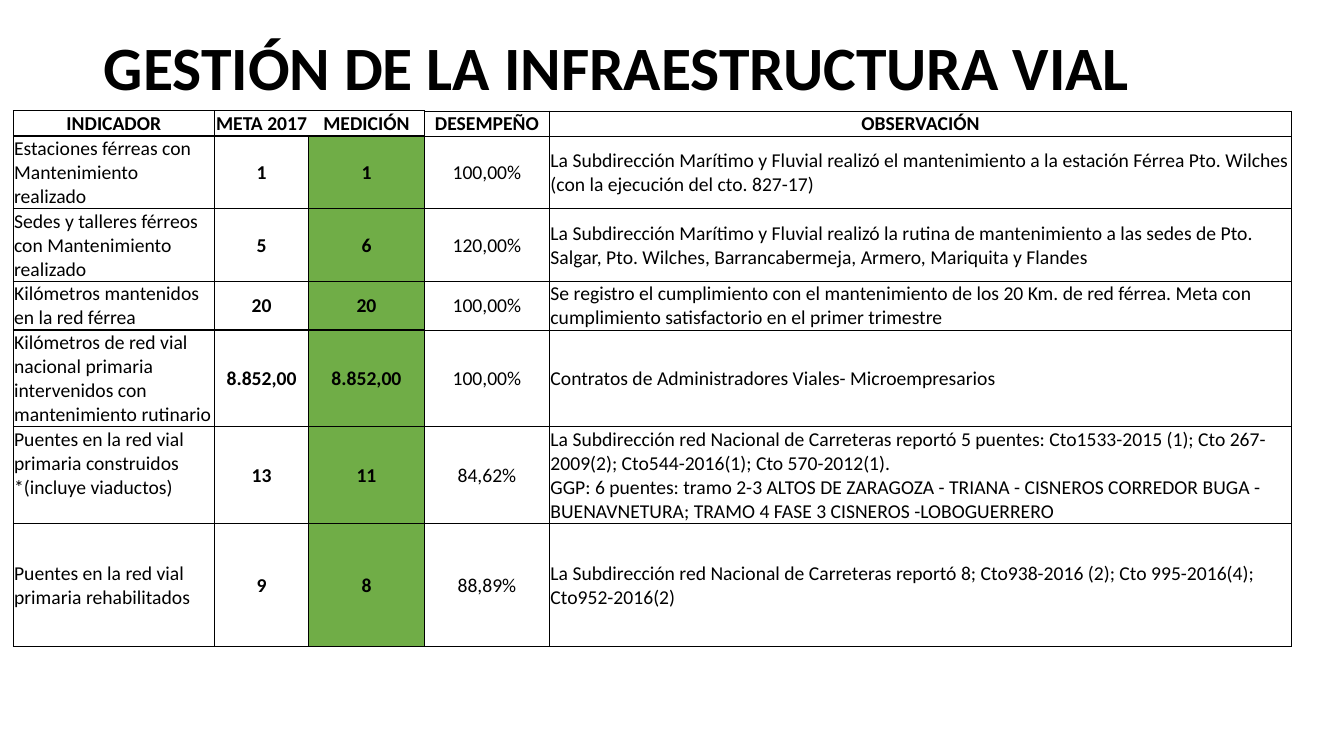
from dataclasses import dataclass

from lxml.etree import SubElement
from pptx import Presentation
from pptx.dml.color import RGBColor
from pptx.enum.text import MSO_ANCHOR, MSO_AUTO_SIZE, PP_ALIGN
from pptx.oxml.ns import qn
from pptx.util import Inches, Pt


@dataclass(frozen=True)
class Theme:
    font: str = "Calibri"
    ink: str = "000000"
    measured: str = "70AD47"
    title_size: int = 44
    table_size: int = 14
    thin: float = 0.5
    thick: float = 1


THEME = Theme()
TITLE = "GESTIÓN DE LA INFRAESTRUCTURA VIAL"
HEADERS = ("INDICADOR", "META 2017", "MEDICIÓN", "DESEMPEÑO", "OBSERVACIÓN")
INDICATORS = (
    ("Estaciones férreas con Mantenimiento realizado", "1", "1", "100,00%",
     "La Subdirección Marítimo y Fluvial realizó el mantenimiento a la estación "
     "Férrea Pto. Wilches (con la ejecución del cto. 827-17)"),
    ("Sedes y talleres férreos con Mantenimiento realizado", "5", "6", "120,00%",
     "La Subdirección Marítimo y Fluvial realizó la rutina de mantenimiento a las "
     "sedes de Pto. Salgar, Pto. Wilches, Barrancabermeja, Armero, Mariquita y Flandes"),
    ("Kilómetros mantenidos en la red férrea", "20", "20", "100,00%",
     "Se registro el cumplimiento con el mantenimiento de los 20 Km. de red férrea. "
     "Meta con cumplimiento satisfactorio en el primer trimestre"),
    ("Kilómetros de red vial nacional primaria intervenidos con mantenimiento rutinario",
     "8.852,00", "8.852,00", "100,00%",
     "Contratos de Administradores Viales- Microempresarios"),
    ("Puentes en la red vial primaria construidos *(incluye viaductos)",
     "13", "11", "84,62%",
     "La Subdirección red Nacional de Carreteras reportó 5 puentes: Cto1533-2015 (1); "
     "Cto 267-2009(2); Cto544-2016(1); Cto 570-2012(1).\n"
     "GGP: 6 puentes: tramo 2-3 ALTOS DE ZARAGOZA - TRIANA - CISNEROS CORREDOR BUGA - "
     "BUENAVNETURA; TRAMO 4 FASE 3 CISNEROS -LOBOGUERRERO"),
    ("Puentes en la red vial primaria rehabilitados", "9", "8", "88,89%",
     "La Subdirección red Nacional de Carreteras reportó 8; Cto938-2016 (2); "
     "Cto 995-2016(4); Cto952-2016(2)"),
)
INDICATOR, TARGET, MEASURE, PERFORMANCE, REMARK = range(len(HEADERS))
BRIDGES_ROW = 5
COL_WIDTHS = (2, 0.93, 1.15, 1.24, 7.36)
ROW_HEIGHTS = (0.25, 0.72, 0.72, 0.48, 0.96, 0.96, 1.22)


def format_paragraph(p, size, bold, align):
    p.alignment = align
    for r in p.runs:
        r.font.name = THEME.font
        r.font.size = Pt(size)
        r.font.bold = bold
        r.font.color.rgb = RGBColor.from_string(THEME.ink)


def add_title(s, left, top, width, height):
    sp = s.shapes.title
    sp.left, sp.top, sp.width, sp.height = map(Inches, (left, top, width, height))
    tf = sp.text_frame
    tf.text = TITLE
    tf.word_wrap = True
    tf.auto_size = MSO_AUTO_SIZE.NONE
    tf.vertical_anchor = MSO_ANCHOR.MIDDLE
    p = tf.paragraphs[0]
    p.line_spacing = 0.9
    format_paragraph(p, THEME.title_size, True, PP_ALIGN.LEFT)


def set_borders(cell, row, col):
    """Draw the cell's sides; the first two number headings share an open side."""
    across = THEME.thick if col <= MEASURE else THEME.thin
    right = THEME.thick if col == REMARK else THEME.thin
    widths = {"lnL": THEME.thin, "lnR": right, "lnT": across, "lnB": across}
    if row == 0 and col in (TARGET, MEASURE):
        widths["lnR" if col == TARGET else "lnL"] = 0
    tcPr = cell._tc.get_or_add_tcPr()
    for side, width in widths.items():
        ln = SubElement(tcPr, qn(f"a:{side}"), w=str(Pt(width)))
        if width:
            fill = SubElement(ln, qn("a:solidFill"))
            SubElement(fill, qn("a:srgbClr"), val=THEME.ink)
        else:
            SubElement(ln, qn("a:noFill"))


def fill_cell(cell, text, row, col):
    cell.margin_left = cell.margin_right = cell.margin_top = Inches(0.01)
    cell.margin_bottom = 0
    top_aligned = row == BRIDGES_ROW and col == INDICATOR
    cell.vertical_anchor = MSO_ANCHOR.TOP if top_aligned else MSO_ANCHOR.MIDDLE
    set_borders(cell, row, col)
    if row and col == MEASURE:
        cell.fill.solid()
        cell.fill.fore_color.rgb = RGBColor.from_string(THEME.measured)
    else:
        cell.fill.background()
    cell.text_frame.text = text
    bold = row == 0 or col in (TARGET, MEASURE)
    prose = row > 0 and col in (INDICATOR, REMARK)
    for p in cell.text_frame.paragraphs:
        format_paragraph(p, THEME.table_size, bold,
                         PP_ALIGN.LEFT if prose else PP_ALIGN.CENTER)


def add_indicator_table(s, left, top):
    rows = (HEADERS, *INDICATORS)
    table = s.shapes.add_table(
        len(rows), len(HEADERS), Inches(left), Inches(top),
        Inches(sum(COL_WIDTHS)), Inches(sum(ROW_HEIGHTS))).table
    table.first_row = table.horz_banding = False
    for column, width in zip(table.columns, COL_WIDTHS):
        column.width = Inches(width)
    for i, (texts, height) in enumerate(zip(rows, ROW_HEIGHTS)):
        table.rows[i].height = Inches(height)
        for j, text in enumerate(texts):
            fill_cell(table.cell(i, j), text, i, j)


def main():
    prs = Presentation()
    prs.slide_width, prs.slide_height = Inches(13.33), Inches(7.5)
    s = prs.slides.add_slide(prs.slide_layouts[5])
    add_title(s, 0.93, -0.02, 11.5, 1.45)
    add_indicator_table(s, 0.13, 1.1)
    prs.save("out.pptx")


if __name__ == "__main__":
    main()
